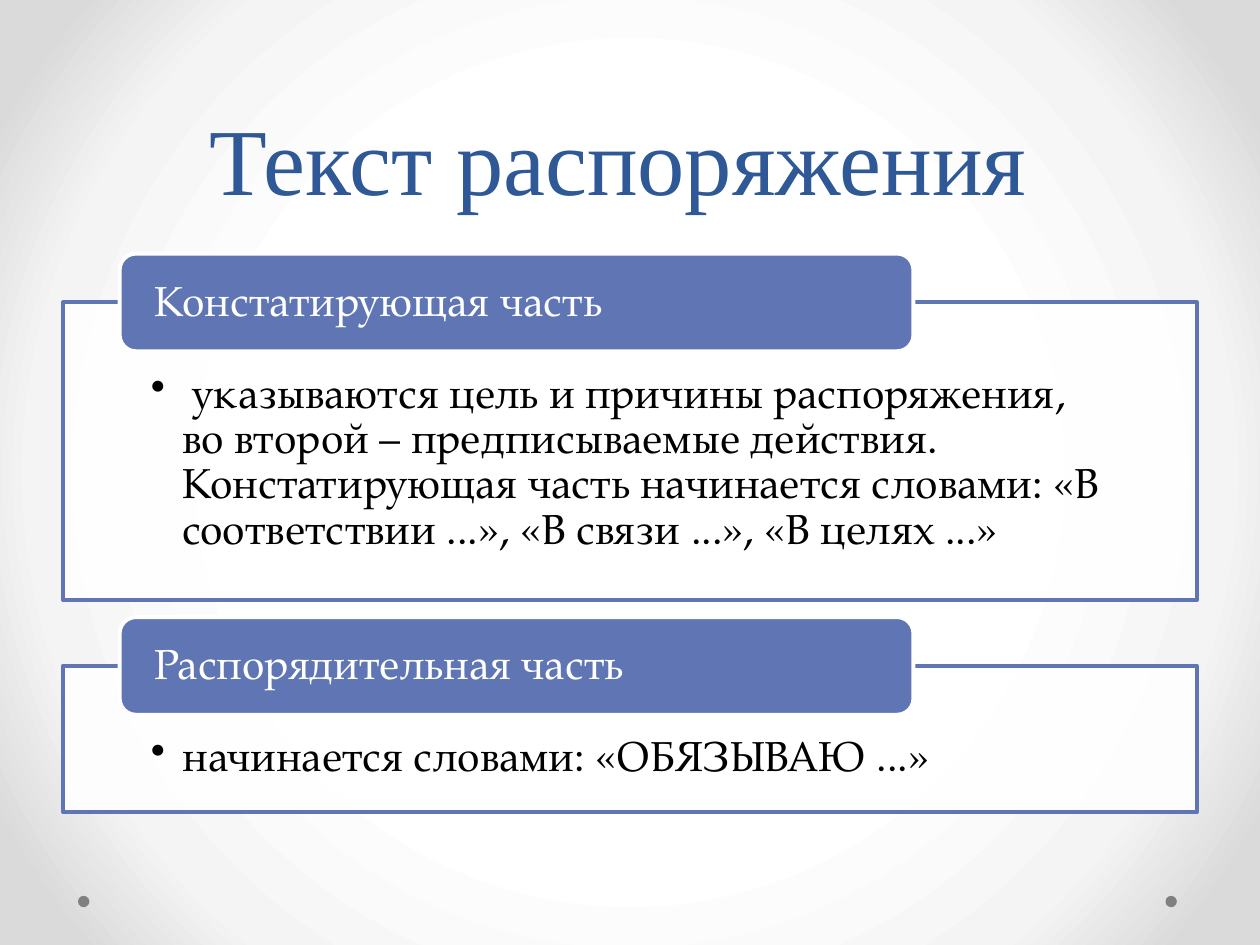
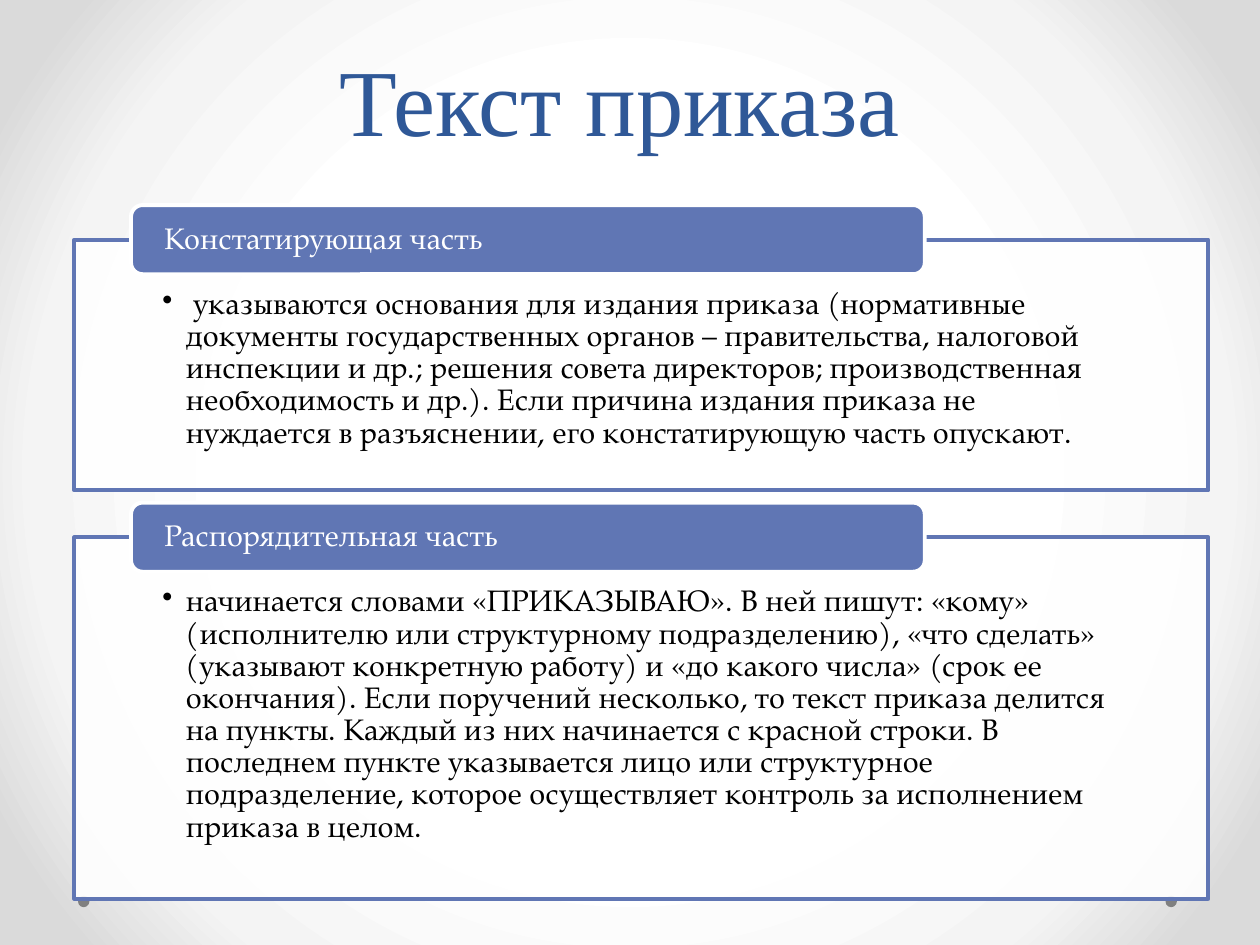
import pptx
import pptx.dml.color
import pptx.enum.shapes
import pptx.enum.text
import pptx.oxml
import pptx.oxml.ns
import pptx.util
from lxml import etree

Pt = pptx.util.Pt
SHAPES = pptx.enum.shapes.MSO_SHAPE
ALIGN = pptx.enum.text.PP_ALIGN
ANCHOR = pptx.enum.text.MSO_ANCHOR

COLORS = {
    "title": "2F5897",
    "accent": "6076B4",
    "white": "FFFFFF",
    "text": "000000",
    "dot": "808080",
}
BACKGROUND_STOPS = [(50, "FFFFFF"), (76, "F4F4F4"), (92, "DADADA")]
TITLE_FONT = "Times New Roman"
BODY_FONT = "TeX Gyre Pagella"

PANEL_WIDTH = 648
HEADER_WIDTH = 453.6
HEADER_OFFSET = 32.4
BORDER = 2.25

SLIDES = [
    {
        "title": "Текст распоряжения ",
        "title_box": (36, 0, 648, 126),
        "left": 36, "top": 144.9, "size": 24, "indent": 18,
        "sections": [
            ("Констатирующая часть", 170,
             " указываются цель и причины распоряжения, во второй – предписываемые "
             "действия. Констатирующая часть начинается словами: «В соответствии ...», "
             "«В связи ...», «В целях ...»"),
            ("Распорядительная часть", 83.5,
             "начинается словами: «ОБЯЗЫВАЮ ...»"),
        ],
    },
    {
        "title": "Текст приказа ",
        "title_box": (36.7, 2.2, 648, 90),
        "left": 42.5, "top": 117.2, "size": 17, "indent": 13.5,
        "sections": [
            ("Констатирующая часть", 143.3,
             " указываются основания для издания приказа (нормативные документы "
             "государственных органов – правительства, налоговой инспекции и др.; "
             "решения совета директоров; производственная необходимость и др.). Если "
             "причина издания приказа не нуждается в разъяснении, его констатирующую "
             "часть опускают."),
            ("Распорядительная часть", 206.6,
             "начинается словами «ПРИКАЗЫВАЮ». В ней пишут: «кому» (исполнителю или "
             "структурному подразделению), «что сделать» (указывают конкретную работу) "
             "и «до какого числа» (срок ее окончания). Если поручений несколько, то "
             "текст приказа делится на пункты. Каждый из них начинается с красной "
             "строки. В последнем пункте указывается лицо или структурное "
             "подразделение, которое осуществляет контроль за исполнением приказа "
             "в целом."),
        ],
    },
]


def rgb(name):
    return pptx.dml.color.RGBColor.from_string(COLORS[name])


def add_child(parent, tag, **attributes):
    child = etree.SubElement(parent, pptx.oxml.ns.qn(tag))
    for name, value in attributes.items():
        child.set(name, str(value))
    return child


def write_text(shape, text, *, size, color, font=BODY_FONT, align=ALIGN.LEFT,
               anchor=ANCHOR.TOP, insets=(7.2, 3.6, 7.2, 3.6), spacing=0.9,
               bullet_indent=None):
    frame = shape.text_frame
    frame.word_wrap = True
    frame.auto_size = pptx.enum.text.MSO_AUTO_SIZE.NONE
    frame.vertical_anchor = anchor
    frame.margin_left, frame.margin_top, frame.margin_right, frame.margin_bottom = map(Pt, insets)
    paragraph = frame.paragraphs[0]
    paragraph.alignment = align
    paragraph.line_spacing = spacing
    if bullet_indent:
        properties = paragraph._p.get_or_add_pPr()
        properties.set("marL", str(Pt(bullet_indent)))
        properties.set("indent", str(-Pt(bullet_indent)))
        add_child(properties, "a:buChar", char="•")
    run = paragraph.add_run()
    run.text = text
    run.font.name = font
    run.font.size = Pt(size)
    run.font.color.rgb = rgb(color)


def add_shape(slide, kind, box, fill, line=None, opacity=None):
    shape = slide.shapes.add_shape(kind, *map(Pt, box))
    shape.shadow.inherit = False
    shape.fill.solid()
    shape.fill.fore_color.rgb = rgb(fill)
    if opacity:
        color = shape._element.spPr.find(".//" + pptx.oxml.ns.qn("a:srgbClr"))
        add_child(color, "a:alpha", val=opacity * 1000)
    if line:
        shape.line.color.rgb = rgb(line)
        shape.line.width = Pt(BORDER)
    else:
        shape.line.fill.background()
    return shape


def set_background(master):
    """Circular gradient shared by all slides."""
    master.background.fill.gradient()
    gradient = master.element.xpath(".//p:bgPr/a:gradFill")[0]
    for child in list(gradient):
        gradient.remove(child)
    stops = add_child(gradient, "a:gsLst")
    for position, color in BACKGROUND_STOPS:
        stop = add_child(stops, "a:gs", pos=position * 1000)
        add_child(stop, "a:srgbClr", val=color)
    circle = add_child(gradient, "a:path", path="circle")
    add_child(circle, "a:fillToRect", l=50000, t=50000, r=50000, b=50000)


def add_title(slide, text, box):
    title = slide.shapes.title
    title.left, title.top, title.width, title.height = map(Pt, box)
    write_text(title, text, size=54, color="title", font=TITLE_FONT,
               align=ALIGN.CENTER, anchor=ANCHOR.BOTTOM, spacing=Pt(58))


def add_footer_dots(slide):
    for left in (44.6, 666):
        add_shape(slide, SHAPES.OVAL, (left, 511.9, 6.5, 6.5), "dot")


def add_sections(slide, sections, left, top, size, indent):
    """Stack panels with overlapping headers; distances follow the text size."""
    header_height = 2.325 * size
    gap = 0.41 * size
    for heading, panel_height, body in sections:
        panel_top = top + header_height / 2
        panel = add_shape(slide, SHAPES.RECTANGLE,
                          (left, panel_top, PANEL_WIDTH, panel_height),
                          "white", line="accent", opacity=90)
        write_text(panel, body, size=size, color="text", bullet_indent=indent,
                   insets=(50.3, 1.65 * size, 50.3, 0.56 * size))
        header = add_shape(slide, SHAPES.ROUNDED_RECTANGLE,
                           (left + HEADER_OFFSET, top, HEADER_WIDTH, header_height),
                           "accent", line="white")
        write_text(header, heading, size=size, color="white",
                   anchor=ANCHOR.MIDDLE, insets=(17.2, 0, 17.2, 0))
        top = panel_top + panel_height + gap


def main():
    presentation = pptx.Presentation()
    presentation.slide_width, presentation.slide_height = Pt(720), Pt(540)
    set_background(presentation.slide_master)
    title_only = presentation.slide_layouts[5]
    for content in SLIDES:
        slide = presentation.slides.add_slide(title_only)
        add_footer_dots(slide)
        add_title(slide, content["title"], content["title_box"])
        add_sections(slide, content["sections"], content["left"], content["top"],
                     content["size"], content["indent"])
    presentation.save("out.pptx")


if __name__ == "__main__":
    main()
